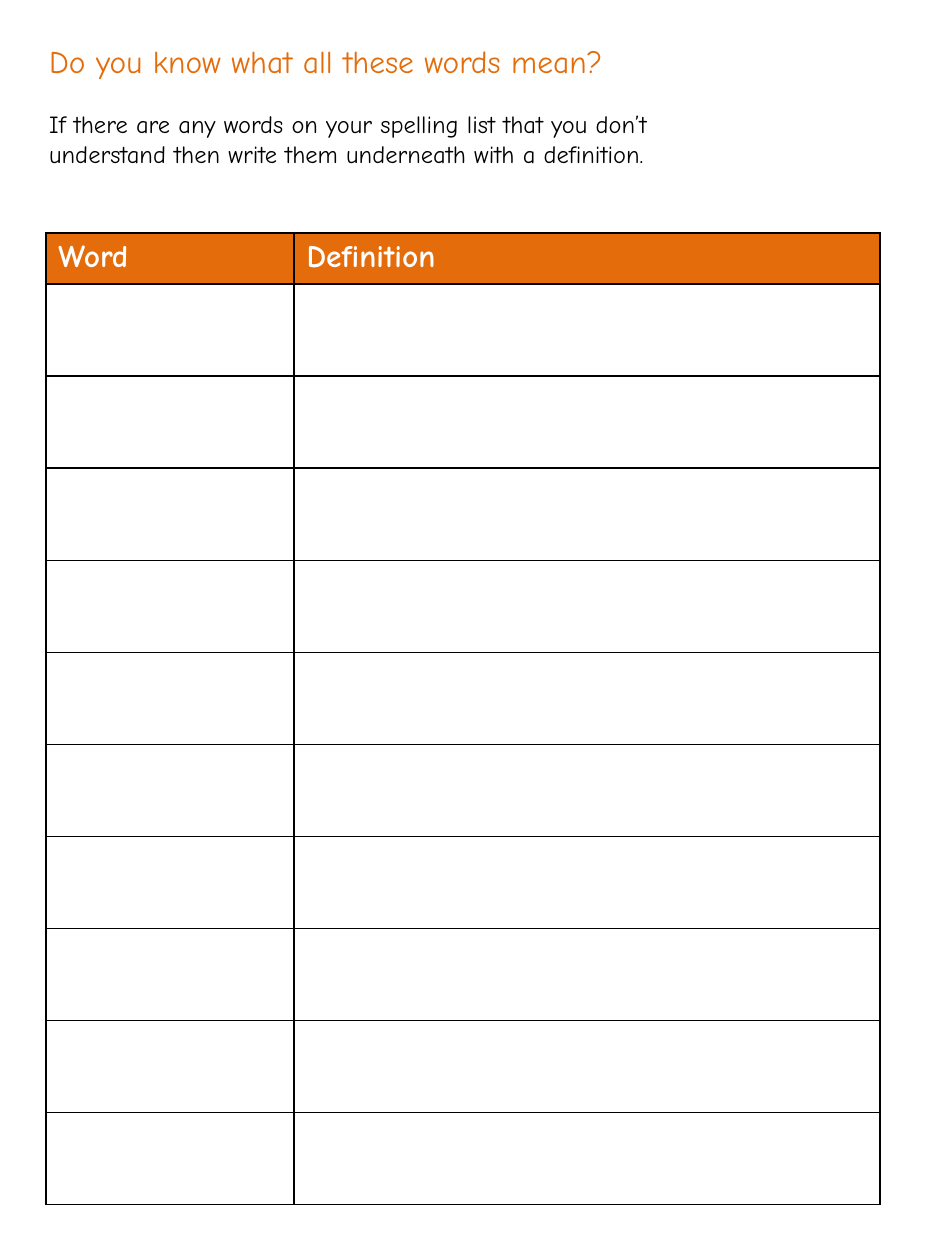
from lxml import etree
from pptx import Presentation
from pptx import util as u
from pptx.dml.color import RGBColor
from pptx.enum import text
from pptx.oxml import ns

"""Builds a spelling worksheet with a table for words and definitions."""

TITLE = "Do you know what all these words mean?"
INSTRUCTION = ("If there are any words on your spelling list that you don’t "
               "understand then write them underneath with a definition.")
HEADINGS = ["Word", "Definition"]
BLANK_ROWS = 10
COLORS = {"orange": "E46C0A", "black": "000000", "white": "FFFFFF"}
FONT = "Comic Neue"
COLUMN_WIDTHS = [141.8, 334.8]
HEADER_HEIGHT, ROW_HEIGHT = 29.2, 52.6
TABLE_LEFT, TABLE_TOP = 26.2, 133.2
TEXT_LEFT, TEXT_WIDTH = 20.9, 402.5


def add_text(paragraph, words, size, color, bold=False):
    run = paragraph.add_run()
    run.text = words
    run.font.name = FONT
    run.font.size = u.Pt(size)
    run.font.bold = bold
    run.font.color.rgb = RGBColor.from_string(COLORS[color])


def fill_placeholder(shape, top, height, words, size, color):
    shape.left, shape.top = u.Pt(TEXT_LEFT), u.Pt(top)
    shape.width, shape.height = u.Pt(TEXT_WIDTH), u.Pt(height)
    frame = shape.text_frame
    frame.word_wrap = True
    frame.auto_size = text.MSO_AUTO_SIZE.NONE
    frame.vertical_anchor = text.MSO_ANCHOR.TOP
    paragraph = frame.paragraphs[0]
    paragraph.alignment = text.PP_ALIGN.LEFT
    paragraph.space_before = u.Pt(0)
    properties = paragraph._p.get_or_add_pPr()
    properties.set("marL", "0")
    properties.set("indent", "0")
    etree.SubElement(properties, ns.qn("a:buNone"))
    add_text(paragraph, words, size, color)


def format_cell(cell, fill):
    properties = cell._tc.get_or_add_tcPr()
    for side in ("lnL", "lnR", "lnT", "lnB"):
        line = etree.SubElement(properties, ns.qn(f"a:{side}"), w=str(u.Pt(1)))
        solid = etree.SubElement(line, ns.qn("a:solidFill"))
        etree.SubElement(solid, ns.qn("a:srgbClr"), val=COLORS["black"])
    cell.fill.solid()
    cell.fill.fore_color.rgb = RGBColor.from_string(COLORS[fill])


def add_word_table(slide):
    heights = [HEADER_HEIGHT] + [ROW_HEIGHT] * BLANK_ROWS
    table = slide.shapes.add_table(
        len(heights), len(HEADINGS), u.Pt(TABLE_LEFT), u.Pt(TABLE_TOP),
        u.Pt(sum(COLUMN_WIDTHS)), u.Pt(sum(heights))).table
    for column, width in zip(table.columns, COLUMN_WIDTHS):
        column.width = u.Pt(width)
    for row, height in zip(table.rows, heights):
        row.height = u.Pt(height)
    for index, row in enumerate(table.rows):
        for cell in row.cells:
            format_cell(cell, "white" if index else "orange")
    for cell, heading in zip(table.rows[0].cells, HEADINGS):
        add_text(cell.text_frame.paragraphs[0], heading, 18, "white", bold=True)


def main():
    presentation = Presentation()
    presentation.slide_width, presentation.slide_height = u.Pt(540), u.Pt(720)
    slide = presentation.slides.add_slide(presentation.slide_layouts[1])
    title, body = slide.placeholders
    fill_placeholder(title, 20.2, 29, TITLE, 18, "orange")
    fill_placeholder(body, 58.8, 41.3, INSTRUCTION, 14, "black")
    add_word_table(slide)
    presentation.save("out.pptx")


if __name__ == "__main__":
    main()
